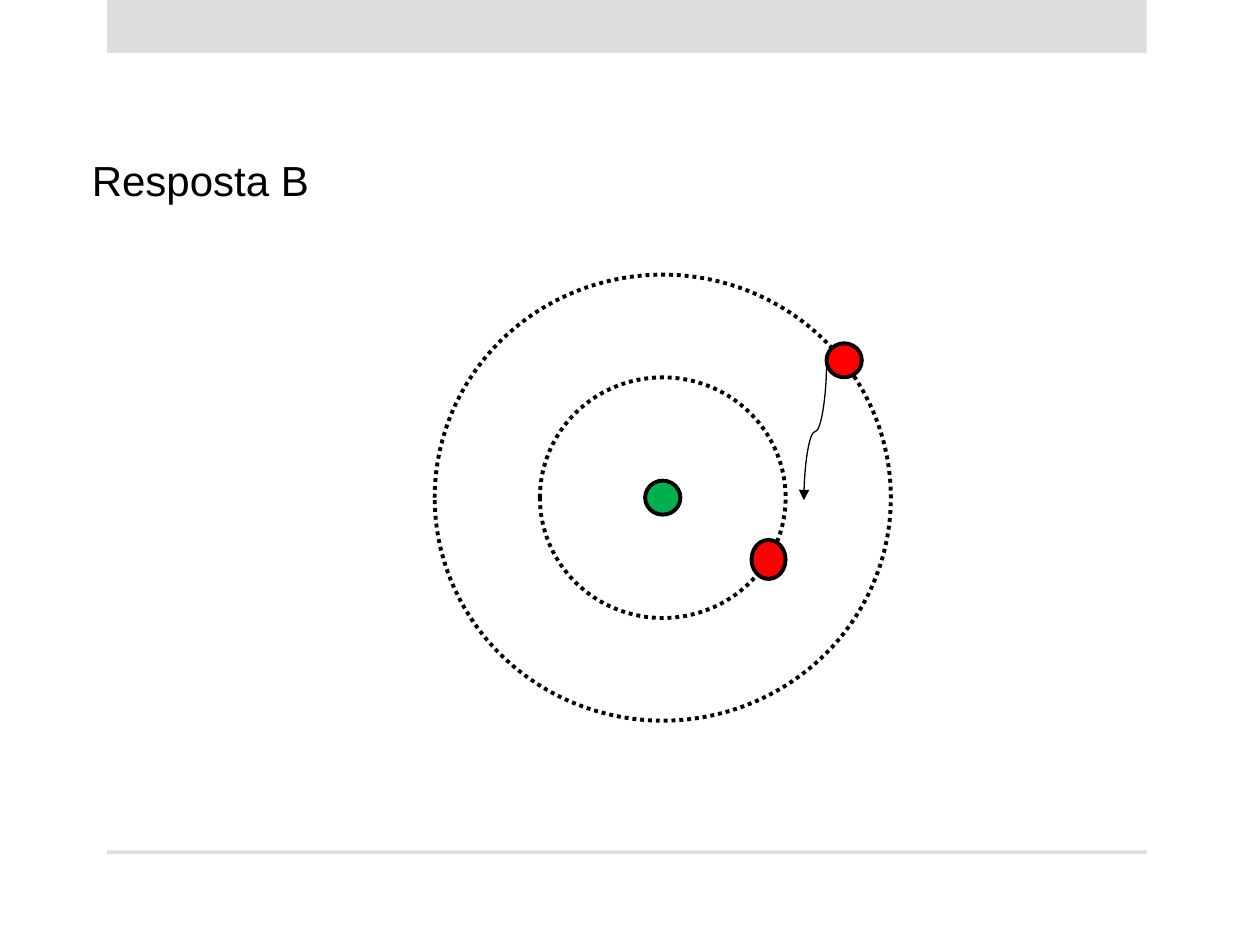
from lxml import etree
from pptx import Presentation
from pptx.dml.color import RGBColor
from pptx.enum.dml import MSO_LINE
from pptx.enum.shapes import MSO_CONNECTOR, MSO_SHAPE
from pptx.oxml.ns import qn
from pptx.util import Inches, Pt

BLACK = RGBColor(0x00, 0x00, 0x00)
GRAY = RGBColor(0xDD, 0xDD, 0xDD)
GREEN = RGBColor(0x00, 0xB0, 0x50)
RED = RGBColor(0xFF, 0x00, 0x00)

RECTANGLE = MSO_SHAPE.RECTANGLE
OVAL = MSO_SHAPE.OVAL
CURVE = MSO_CONNECTOR.CURVE
DOTTED = MSO_LINE.ROUND_DOT

TITLE_FORMAT = {"name": "Arial", "size": Pt(24)}
SOLID_OUTLINE = {"width": Pt(2.25)}
DOTTED_OUTLINE = {"width": Pt(2.25), "dash_style": DOTTED}
ARROW_OUTLINE = {"width": Pt(0.75)}


def apply_format(target, values):
    for name, value in values.items():
        setattr(target, name, value)


class SlideBuilder:
    def __init__(self, slide):
        self.slide = slide
        self.group = slide.shapes.add_group_shape

    def bar(self, left, top, width, height):
        shape = self.slide.shapes.add_shape(
            RECTANGLE, Inches(left), Inches(top), Inches(width), Inches(height))
        shape.shadow.inherit = False
        shape.fill.solid()
        shape.fill.fore_color.rgb = GRAY
        shape.line.fill.background()

    def title(self, text, left, top, width, height):
        box = self.slide.shapes.add_textbox(
            Inches(left), Inches(top), Inches(width), Inches(height))
        box.text_frame.word_wrap = True
        run = box.text_frame.paragraphs[0].add_run()
        run.text = text
        apply_format(run.font, TITLE_FORMAT)
        run.font.color.rgb = BLACK

    def ellipse(self, group, center, width, height, outline, color=None):
        shape = group.shapes.add_shape(
            OVAL, Inches(center[0] - width / 2), Inches(center[1] - height / 2),
            Inches(width), Inches(height))
        shape.shadow.inherit = False
        if color is None:
            shape.fill.background()
        else:
            shape.fill.solid()
            shape.fill.fore_color.rgb = color
        shape.line.color.rgb = BLACK
        apply_format(shape.line, outline)

    def downward_curve(self, group, start, end):
        """Draw an S-curve that leaves and arrives vertically."""
        middle_x, middle_y = (start[0] + end[0]) / 2, (start[1] + end[1]) / 2
        half_length, half_shift = (end[1] - start[1]) / 2, (start[0] - end[0]) / 2
        connector = group.shapes.add_connector(
            CURVE, Inches(middle_x - half_length), Inches(middle_y - half_shift),
            Inches(middle_x + half_length), Inches(middle_y + half_shift))
        connector.line.color.rgb = BLACK
        apply_format(connector.line, ARROW_OUTLINE)
        # Quarter turn, arrowhead and no shadow
        properties = connector.element.spPr
        properties.find(qn("a:xfrm")).set("rot", str(90 * 60000))
        etree.SubElement(properties.find(qn("a:ln")), qn("a:tailEnd"), type="triangle")
        etree.SubElement(properties, qn("a:effectLst"))


def main():
    presentation = Presentation()
    presentation.slide_width = Inches(10)
    presentation.slide_height = Inches(7.5)
    slide = presentation.slides.add_slide(presentation.slide_layouts[6])
    builder = SlideBuilder(slide)

    # Header and footer bars
    builder.bar(0.85, 0, 8.25, 0.42)
    builder.bar(0.85, 6.75, 8.25, 0.03)

    builder.title("Resposta B", 0.63, 1.18, 9.25, 0.5)

    # Nucleus and its two orbits
    atom = builder.group()
    nucleus = (5.26, 3.95)
    builder.ellipse(atom, nucleus, 0.28, 0.27, SOLID_OUTLINE, GREEN)
    for width, height in ((1.95, 1.91), (3.62, 3.54)):
        builder.ellipse(atom, nucleus, width, height, DOTTED_OUTLINE)

    # Electrons and the jump to the inner orbit
    builder.ellipse(atom, (6.7, 2.86), 0.28, 0.27, SOLID_OUTLINE, RED)
    builder.ellipse(atom, (6.1, 4.44), 0.27, 0.31, SOLID_OUTLINE, RED)
    builder.downward_curve(atom, (6.56, 2.88), (6.38, 3.97))

    presentation.save("out.pptx")


if __name__ == "__main__":
    main()
